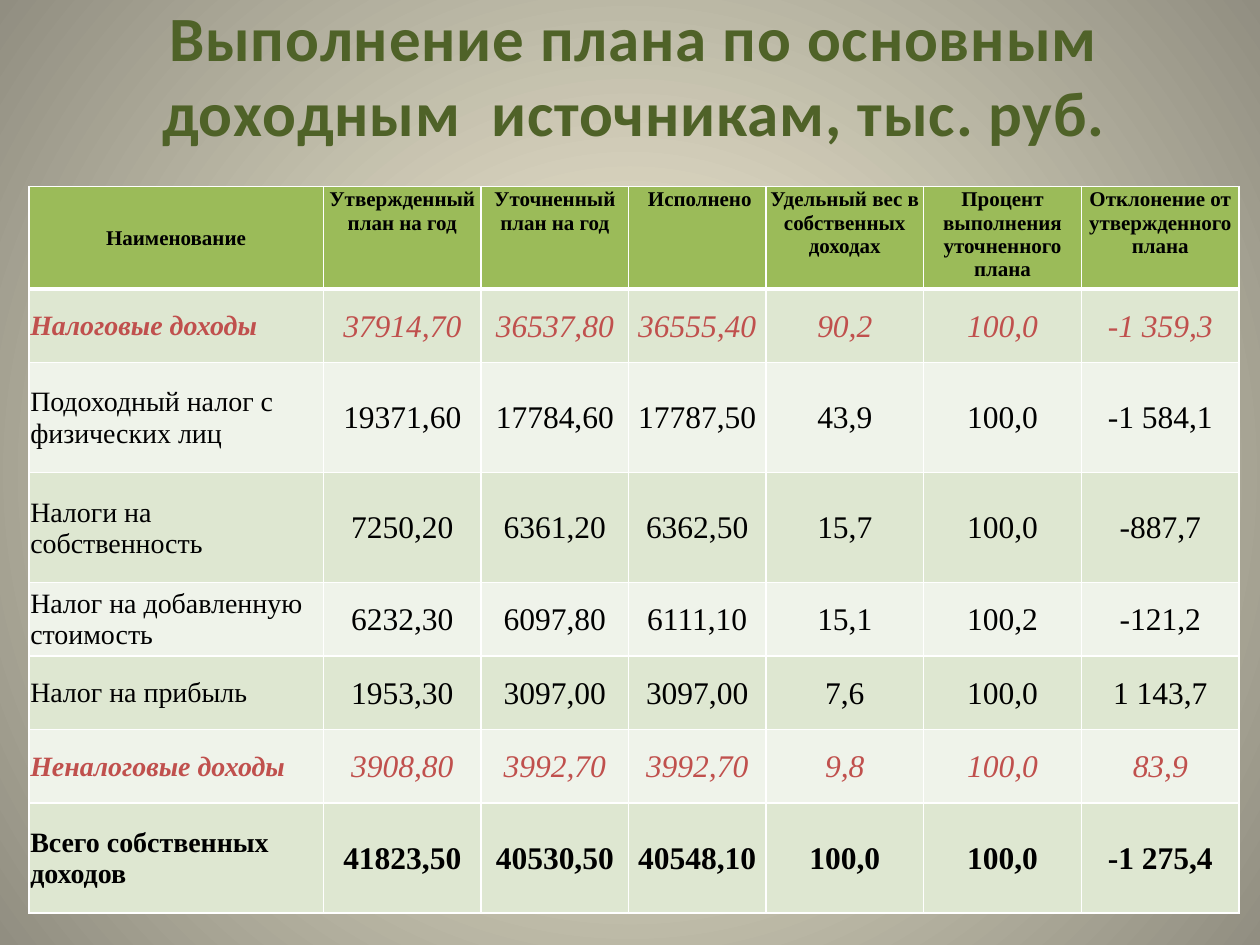
from lxml.etree import SubElement
from pptx import Presentation
from pptx.dml.color import RGBColor as Rgb
from pptx.enum.text import MSO_ANCHOR as Anchor, PP_ALIGN as Align
from pptx.oxml import parse_xml
from pptx.oxml.ns import nsdecls, qn
from pptx.util import Cm, Pt

COLORS = {
    "title": "4F6228",
    "text": "000000",
    "group": "C0504D",
    "header": "9BBB59",
    "odd_row": "DEE7D1",
    "even_row": "EFF3EA",
    "border": "FFFFFF",
    "glow": "FCF7DD",
    "edge": "918E81",
}
TABLE_FONT = "Times New Roman"
COLUMN_WIDTHS = [5.94, 3.18, 2.97, 2.77, 3.18, 3.18, 3.18]
HEADER_HEIGHT, SHORT_ROW, TALL_ROW = 1.9, 1.48, 2.22

TITLE = "Выполнение плана по основным доходным  источникам, тыс. руб."
HEADINGS = [
    "Наименование", "Утвержденный план на год", "Уточненный план на год",
    " Исполнено", "Удельный вес в собственных доходах",
    "Процент выполнения уточненного плана",
    "Отклонение от утвержденного плана",
]
INCOME = [
    ("group", SHORT_ROW, ["Налоговые доходы", "37914,70", "36537,80",
                          "36555,40", "90,2", "100,0", "-1 359,3"]),
    ("item", TALL_ROW, ["Подоходный налог с физических лиц", "19371,60",
                        "17784,60", "17787,50", "43,9", "100,0", "-1 584,1"]),
    ("item", TALL_ROW, ["Налоги на собственность", "7250,20", "6361,20",
                        "6362,50", "15,7", "100,0", "-887,7"]),
    ("item", SHORT_ROW, ["Налог на добавленную стоимость", "6232,30",
                         "6097,80", "6111,10", "15,1", "100,2", "-121,2"]),
    ("item", SHORT_ROW, ["Налог на прибыль", "1953,30", "3097,00",
                         "3097,00", "7,6", "100,0", "1 143,7"]),
    ("group", SHORT_ROW, ["Неналоговые доходы", "3908,80", "3992,70",
                          "3992,70", "9,8", "100,0", "83,9"]),
    ("total", TALL_ROW, ["Всего собственных доходов", "41823,50", "40530,50",
                         "40548,10", "100,0", "100,0", "-1 275,4"]),
]


def color(name):
    return Rgb.from_string(COLORS[name])


def style_font(font, name, size, color_name, bold=False, italic=False):
    font.name, font.size = name, Pt(size)
    font.bold, font.italic = bold, italic
    font.color.rgb = color(color_name)


def paint_background(slide):
    fill = slide.background.fill
    fill.gradient()
    for stop, name in zip(fill.gradient_stops, ("glow", "edge")):
        stop.color.rgb = color(name)
    gradient = slide.background._cSld.find(".//" + qn("a:gradFill"))
    radial = parse_xml(
        f'<a:path {nsdecls("a")} path="circle">'
        '<a:fillToRect l="50000" t="50000" r="50000" b="50000"/></a:path>')
    gradient.replace(gradient.find(qn("a:lin")), radial)


def add_title(slide):
    frame = slide.shapes.add_textbox(
        Cm(0.58), Cm(0), Cm(24.41), Cm(2.97)).text_frame
    frame.word_wrap = True
    frame.vertical_anchor = Anchor.MIDDLE
    heading = frame.paragraphs[0]
    heading.alignment = Align.CENTER
    run = heading.add_run()
    run.text = TITLE
    style_font(run.font, "Calibri", 36, "title", bold=True)
    run._r.get_or_add_rPr().set("spc", "50")


def set_borders(cell, widths):
    properties = cell._tc.get_or_add_tcPr()
    for position, (side, width) in enumerate(widths.items()):
        line = SubElement(properties, qn(f"a:ln{side}"), w=str(Pt(width)))
        solid = SubElement(line, qn("a:solidFill"))
        SubElement(solid, qn("a:srgbClr"), val=COLORS["border"])
        properties.insert(position, line)


def fill_cell(cell, text, fill, align, anchor, bottom=1, top=1, **font):
    cell.margin_left = cell.margin_right = cell.margin_top = Cm(0.03)
    cell.margin_bottom = 0
    cell.vertical_anchor = anchor
    cell.fill.solid()
    cell.fill.fore_color.rgb = color(fill)
    set_borders(cell, {"L": 1, "R": 1, "T": top, "B": bottom})
    cell.text = text
    paragraph = cell.text_frame.paragraphs[0]
    paragraph.alignment = align
    style_font(paragraph.font, TABLE_FONT, **font)


def fill_header(table):
    for column, text in enumerate(HEADINGS):
        fill_cell(table.cell(0, column), text, "header", Align.CENTER,
                  Anchor.TOP if column else Anchor.MIDDLE, bottom=3,
                  size=12, color_name="text", bold=True)


def fill_income_row(table, row, kind, values):
    group, total = kind == "group", kind == "total"
    for column, text in enumerate(values):
        is_name = column == 0
        fill_cell(table.cell(row, column), text,
                  "odd_row" if row % 2 else "even_row",
                  Align.LEFT if is_name else Align.CENTER, Anchor.MIDDLE,
                  top=3 if row == 1 else 1,
                  size=16 if is_name else 18,
                  color_name="group" if group else "text",
                  bold=total or (group and is_name), italic=group)


def add_income_table(slide):
    heights = [HEADER_HEIGHT] + [height for _, height, _ in INCOME]
    table = slide.shapes.add_table(
        len(heights), len(COLUMN_WIDTHS), Cm(0.58), Cm(3.76),
        Cm(sum(COLUMN_WIDTHS)), Cm(sum(heights))).table
    for column, width in zip(table.columns, COLUMN_WIDTHS):
        column.width = Cm(width)
    for row, height in zip(table.rows, heights):
        row.height = Cm(height)
    fill_header(table)
    for row, (kind, _, values) in enumerate(INCOME, start=1):
        fill_income_row(table, row, kind, values)


def main():
    deck = Presentation()
    deck.slide_width, deck.slide_height = Cm(25.4), Cm(19.05)
    slide = deck.slides.add_slide(deck.slide_layouts[6])
    paint_background(slide)
    add_title(slide)
    add_income_table(slide)
    deck.save("out.pptx")


if __name__ == "__main__":
    main()
